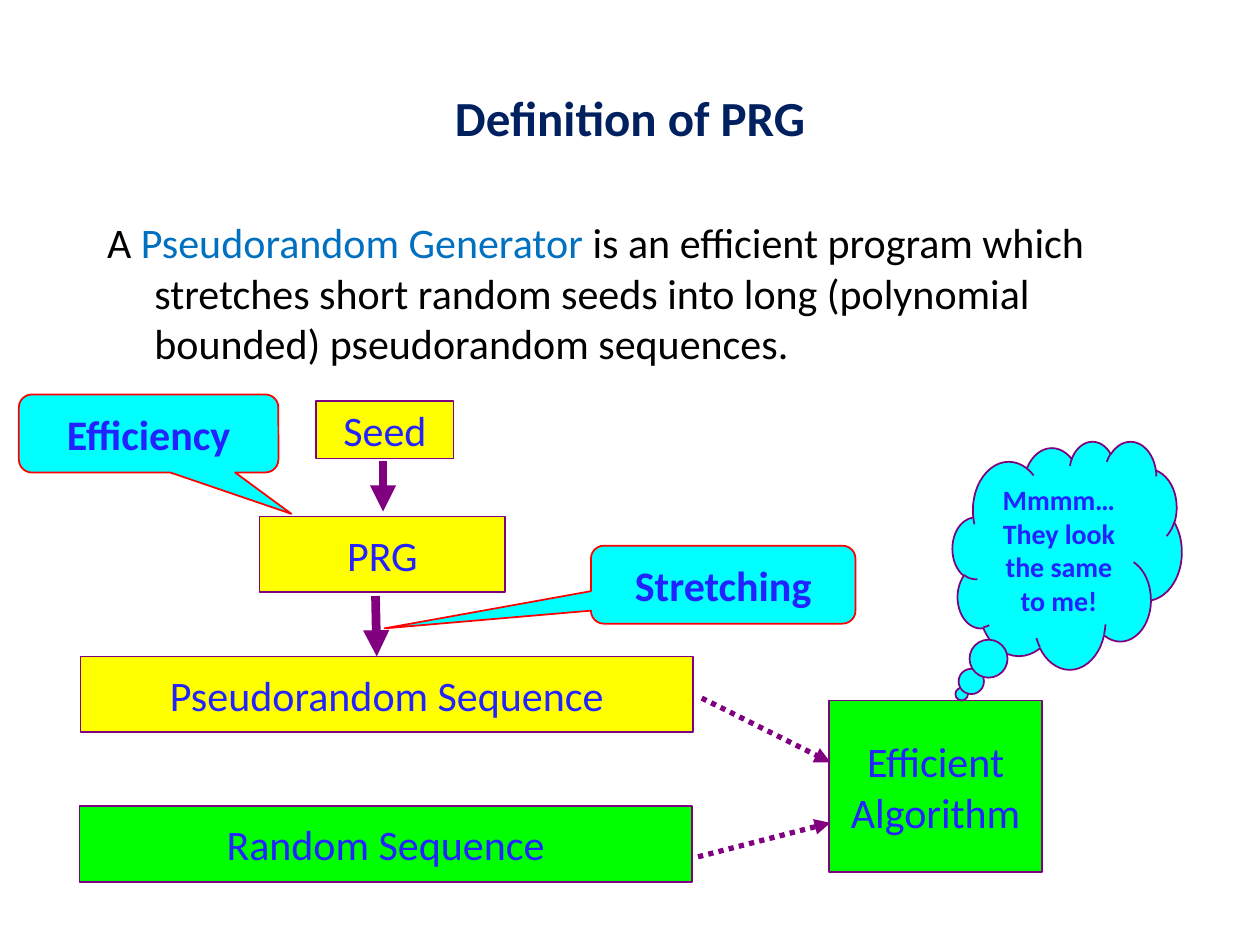
from dataclasses import dataclass

from lxml import etree
from pptx import Presentation
from pptx.dml.color import RGBColor
from pptx.enum.dml import MSO_LINE
from pptx.enum.shapes import MSO_CONNECTOR, MSO_SHAPE
from pptx.enum.text import MSO_ANCHOR, MSO_AUTO_SIZE, PP_ALIGN
from pptx.oxml.ns import qn
from pptx.util import Pt

RECTANGLE = MSO_SHAPE.RECTANGLE
SPEECH = MSO_SHAPE.ROUNDED_RECTANGULAR_CALLOUT
CLOUD = MSO_SHAPE.CLOUD_CALLOUT
STRAIGHT = MSO_CONNECTOR.STRAIGHT
DOTTED = MSO_LINE.ROUND_DOT
CENTER = PP_ALIGN.CENTER
MIDDLE, TOP = MSO_ANCHOR.MIDDLE, MSO_ANCHOR.TOP


@dataclass(frozen=True)
class Theme:
    font: str = "Calibri"
    title_size: int = 28
    text_size: int = 24
    thought_size: int = 16
    title: str = "002060"
    text: str = "000000"
    term: str = "0070C0"
    label: str = "2323FF"
    yellow: str = "FFFF00"
    green: str = "00FF00"
    cyan: str = "00FFFF"
    purple: str = "800080"
    red: str = "FF0000"


THEME = Theme()


def apply_format(target, values):
    for name, value in values.items():
        setattr(target, name, value)


def add_run(paragraph, text, size, color, bold=False):
    run = paragraph.add_run()
    run.text = text
    apply_format(run.font, {"name": THEME.font, "size": Pt(size), "bold": bold})
    run.font.color.rgb = RGBColor.from_string(color)


def place(shape, left, top, width, height):
    apply_format(shape, {"left": Pt(left), "top": Pt(top),
                         "width": Pt(width), "height": Pt(height)})


def fill_title(placeholder, text):
    place(placeholder, 36, 21.6, 648, 90)
    placeholder.text_frame.vertical_anchor = MIDDLE
    paragraph = placeholder.text_frame.paragraphs[0]
    paragraph.alignment = CENTER
    add_run(paragraph, text, THEME.title_size, THEME.title, bold=True)


def fill_body(placeholder, parts):
    """Write one hanging paragraph without a bullet from (text, color) parts."""
    place(placeholder, 54, 120.2, 612, 129.6)
    apply_format(placeholder.text_frame,
                 {"auto_size": MSO_AUTO_SIZE.NONE, "vertical_anchor": TOP})
    paragraph = placeholder.text_frame.paragraphs[0]
    properties = paragraph._p.get_or_add_pPr()
    properties.set("marL", str(Pt(27)))
    properties.set("indent", str(-Pt(27)))
    etree.SubElement(properties, qn("a:buNone"))
    for text, color in parts:
        add_run(paragraph, text, THEME.text_size, color)


def add_label_shape(slide, kind, box, lines, fill, outline,
                    size=THEME.text_size, bold=False, wrap=False):
    shape = slide.shapes.add_shape(kind, *map(Pt, box))
    shape.shadow.inherit = False
    shape.fill.solid()
    shape.fill.fore_color.rgb = RGBColor.from_string(fill)
    shape.line.color.rgb = RGBColor.from_string(outline)
    shape.line.width = Pt(1)
    frame = shape.text_frame
    apply_format(frame, {"word_wrap": wrap, "vertical_anchor": MIDDLE})
    for index, line in enumerate(lines):
        paragraph = frame.add_paragraph() if index else frame.paragraphs[0]
        paragraph.alignment = CENTER
        add_run(paragraph, line, size, THEME.label, bold)
    return shape


def add_box(slide, box, lines, fill):
    add_label_shape(slide, RECTANGLE, box, lines, fill, THEME.purple)


def add_callout(slide, kind, box, lines, pointer, outline, size=THEME.text_size):
    shape = add_label_shape(slide, kind, box, lines, THEME.cyan, outline,
                            size, bold=True, wrap=True)
    for index, value in enumerate(pointer):
        shape.adjustments[index] = value


def add_arrow(slide, start, end, width, dash=None):
    connector = slide.shapes.add_connector(STRAIGHT, *map(Pt, start + end))
    connector.line.color.rgb = RGBColor.from_string(THEME.purple)
    apply_format(connector.line, {"width": Pt(width), "dash_style": dash})
    properties = connector._element.spPr
    etree.SubElement(properties.find(qn("a:ln")), qn("a:tailEnd"), type="triangle")
    etree.SubElement(properties, qn("a:effectLst"))


def main():
    presentation = Presentation()
    apply_format(presentation, {"slide_width": Pt(720), "slide_height": Pt(540)})
    slide = presentation.slides.add_slide(presentation.slide_layouts[1])

    # Title and definition
    fill_title(slide.shapes.title, "Definition of PRG")
    fill_body(slide.placeholders[1], [
        ("A ", THEME.text),
        ("Pseudorandom Generator ", THEME.term),
        ("is an efficient program which stretches short random seeds into long "
         "(polynomial bounded) pseudorandom sequences.", THEME.text),
    ])

    # Boxes: generator chain in yellow, comparison in green
    for box, lines, fill in [
        ((180.7, 229, 78.5, 33.1), ["Seed"], THEME.yellow),
        ((148.3, 295.2, 140.4, 43.2), ["PRG"], THEME.yellow),
        ((46.1, 375.1, 349.9, 43.2), ["Pseudorandom Sequence"], THEME.yellow),
        ((45.4, 460.8, 349.9, 43.2), ["Random Sequence"], THEME.green),
        ((473.8, 400.3, 121.7, 97.9), ["Efficient", "Algorithm"], THEME.green),
    ]:
        add_box(slide, box, lines, fill)

    # Dotted arrows into the algorithm, solid arrows down the chain
    add_arrow(slide, (401, 398.9), (474.5, 435.6), 3, DOTTED)
    add_arrow(slide, (398.9, 489.6), (474.5, 470.2), 3, DOTTED)
    add_arrow(slide, (218.9, 263.5), (218.9, 292.3), 5)
    add_arrow(slide, (214.6, 340.6), (215.3, 375.1), 5)

    # Callouts
    add_callout(slide, SPEECH, (337.7, 311.8, 151.2, 44.6), ["Stretching"],
                (-1.28, 0.56), THEME.red)
    add_callout(slide, SPEECH, (10.8, 225.4, 148.3, 44.6), ["Efficiency"],
                (0.55, 1.03), THEME.red)
    add_callout(slide, CLOUD, (544.3, 252, 131, 130.3),
                ["Mmmm…", "They look the same to me!"],
                (-0.46, 0.61), THEME.purple, THEME.thought_size)

    presentation.save("out.pptx")


if __name__ == "__main__":
    main()
